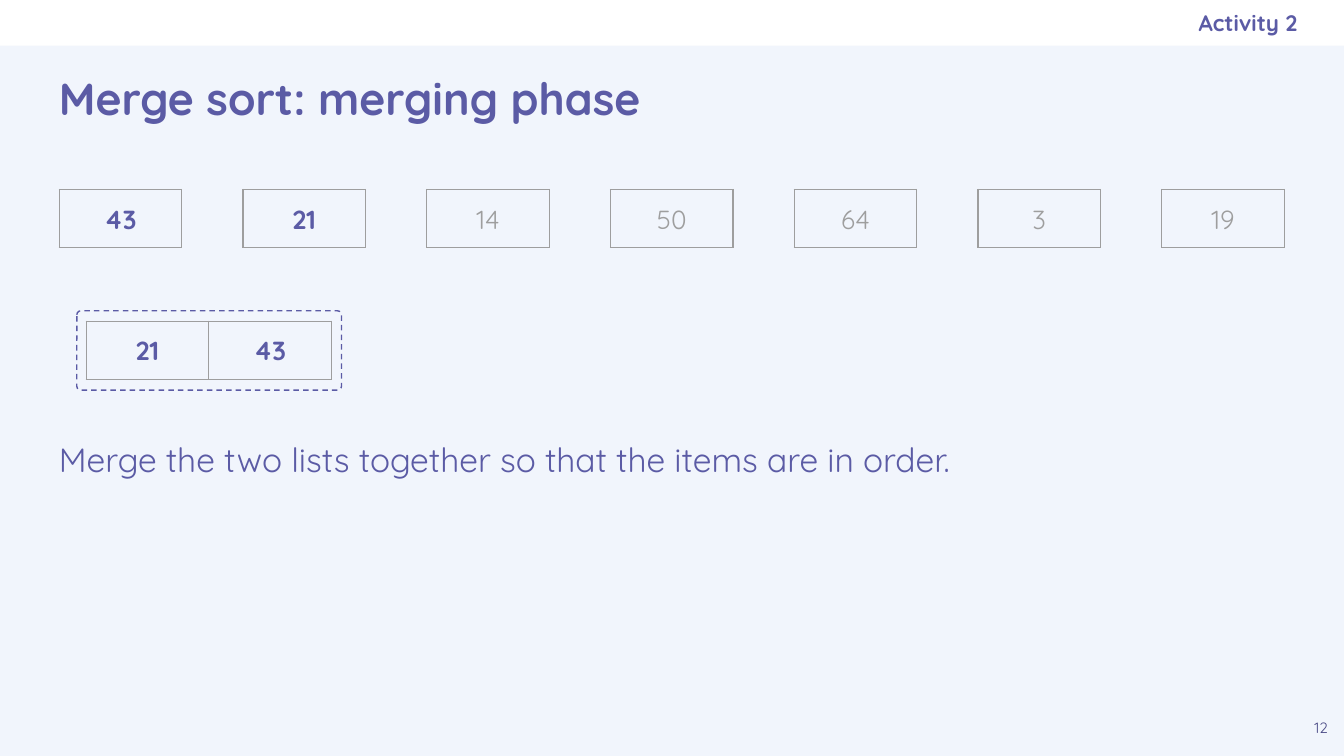
from lxml import etree
from pptx import Presentation
from pptx import util as u
from pptx.dml.color import RGBColor
from pptx.enum import dml, shapes, text
from pptx.oxml import ns

PURPLE, GREY, WHITE, PALE = "5B5BA5", "9E9E9E", "FFFFFF", "F1F5FC"
LEFT, CENTRE, RIGHT = text.PP_ALIGN.LEFT, text.PP_ALIGN.CENTER, text.PP_ALIGN.RIGHT
TOP, MIDDLE = text.MSO_ANCHOR.TOP, text.MSO_ANCHOR.MIDDLE


def colour(hex_value):
    return RGBColor.from_string(hex_value)


class SlideBuilder:
    font_name = "Quicksand"
    inset = 7.2
    line_width = 0.75
    cell_width, cell_height = 65.6, 30.6

    def __init__(self, slide):
        self.slide = slide

    def background(self, fill):
        self.slide.background.fill.solid()
        self.slide.background.fill.fore_color.rgb = colour(fill)

    def set_words(self, paragraph, words, size, ink, bold=False, align=LEFT):
        paragraph.text = words
        paragraph.alignment = align
        for run in paragraph.runs:
            run.font.name = self.font_name
            run.font.size = u.Pt(size)
            run.font.bold = bold
            run.font.color.rgb = colour(ink)

    def text_box(self, box, words, size, ink=PURPLE, bold=False, align=LEFT,
                 anchor=TOP, right_inset=inset):
        text_frame = self.slide.shapes.add_textbox(*map(u.Pt, box)).text_frame
        text_frame.word_wrap = True
        text_frame.vertical_anchor = anchor
        text_frame.margin_left = text_frame.margin_top = u.Pt(self.inset)
        text_frame.margin_bottom = u.Pt(self.inset)
        text_frame.margin_right = u.Pt(right_inset)
        paragraph = text_frame.paragraphs[0]
        self.set_words(paragraph, words, size, ink, bold, align)
        return paragraph

    def box(self, kind, box, fill=None, line=None):
        shape = self.slide.shapes.add_shape(kind, *map(u.Pt, box))
        shape.shadow.inherit = False
        if fill:
            shape.fill.solid()
            shape.fill.fore_color.rgb = colour(fill)
        else:
            shape.fill.background()
        if line:
            shape.line.color.rgb = colour(line)
            shape.line.width = u.Pt(self.line_width)
        else:
            shape.line.fill.background()
        return shape

    def borders(self, cell):
        properties = cell._tc.get_or_add_tcPr()
        for index, side in enumerate(("lnL", "lnR", "lnT", "lnB")):
            line = etree.Element(ns.qn(f"a:{side}"), w=str(u.Pt(self.line_width)))
            fill = etree.SubElement(line, ns.qn("a:solidFill"))
            etree.SubElement(fill, ns.qn("a:srgbClr"), val=GREY)
            properties.insert(index, line)

    def number_list(self, left, top, numbers, active):
        width = self.cell_width * len(numbers)
        frame = self.slide.shapes.add_table(
            1, len(numbers), u.Pt(left), u.Pt(top), u.Pt(width), u.Pt(self.cell_height))
        table = frame.table
        table.first_row = table.horz_banding = False
        for column, number in enumerate(numbers):
            table.columns[column].width = u.Pt(self.cell_width)
            cell = table.cell(0, column)
            cell.fill.background()
            cell.margin_left = cell.margin_right = u.Pt(self.inset)
            cell.margin_top = cell.margin_bottom = u.Pt(self.inset)
            self.borders(cell)
            self.set_words(cell.text_frame.paragraphs[0], str(number), 14,
                           PURPLE if active else GREY, active, CENTRE)


def main():
    presentation = Presentation()
    presentation.slide_width, presentation.slide_height = u.Pt(720), u.Pt(405)
    builder = SlideBuilder(presentation.slides.add_slide(presentation.slide_layouts[6]))

    # Background and header band
    builder.background(PALE)
    builder.box(shapes.MSO_SHAPE.RECTANGLE, (0, 0, 720, 24.5), fill=WHITE)
    builder.text_box((414, 0, 281, 24.5), "Activity 2", 12, bold=True,
                     align=RIGHT, anchor=MIDDLE, right_inset=0)

    # Title
    builder.text_box((24.5, 24.5, 671, 55.5), "Merge sort: merging phase", 24,
                     bold=True, anchor=MIDDLE)

    # Single-item lists, the first two being merged
    for index, number in enumerate((43, 21, 14, 50, 64, 3, 19)):
        builder.number_list(31.7 + 98.45 * index, 101.5, [number], active=index < 2)

    # Merged list in its dashed outline
    outline = builder.box(shapes.MSO_SHAPE.ROUNDED_RECTANGLE,
                          (41.2, 166.5, 141.8, 42.5), line=PURPLE)
    outline.adjustments[0] = 0.05
    outline.line.dash_style = dml.MSO_LINE.DASH
    builder.number_list(46.2, 172.1, [21, 43], active=True)

    # Explanation
    explanation = builder.text_box(
        (24.5, 224.6, 671, 101.5),
        "Merge the two lists together so that the items are in order.", 18)
    explanation.line_spacing = 1.15
    explanation.space_after = u.Pt(16)

    # Slide number
    builder.text_box((695.5, 380.2, 24.5, 24.5), "12", 8, ink="494985", align=CENTRE)

    presentation.save("out.pptx")


if __name__ == "__main__":
    main()
